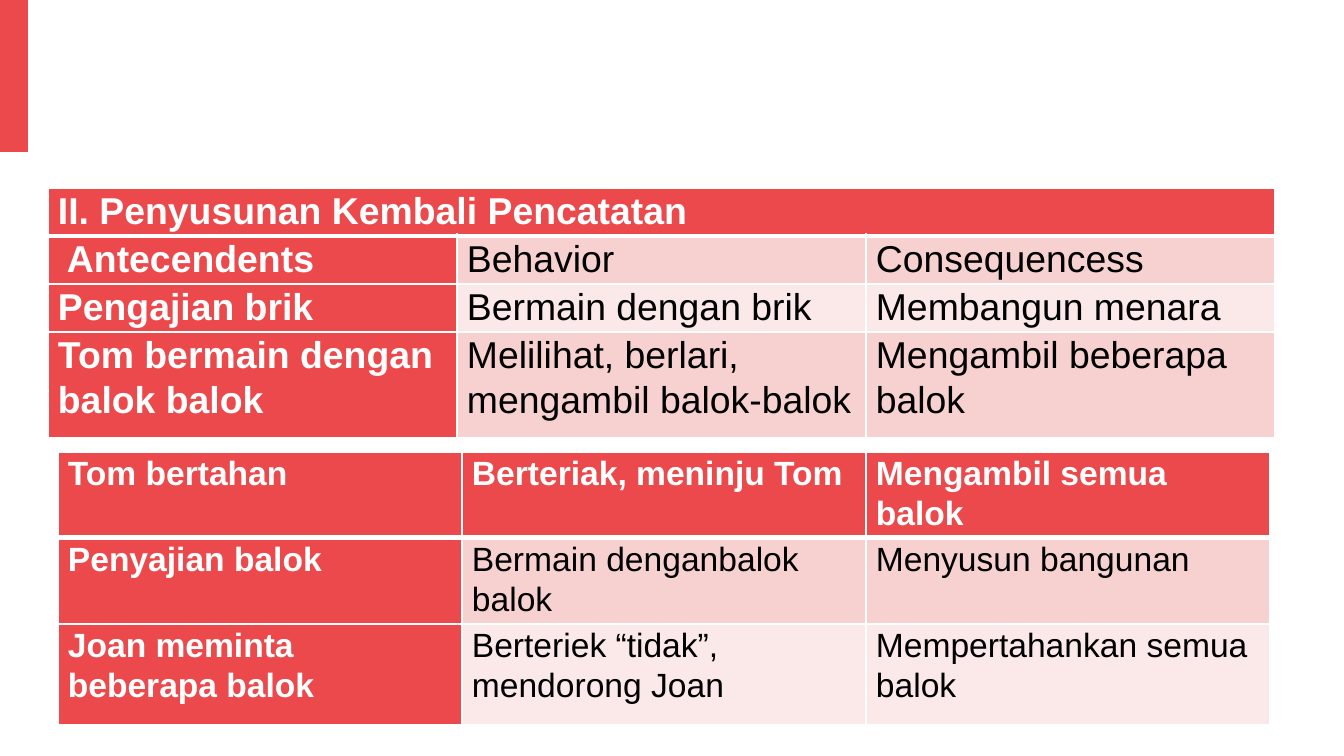
from pptx import Presentation, util as u
from pptx.dml.color import RGBColor
from pptx.enum import shapes
from pptx.oxml.ns import qn
from lxml import etree

# Content and layout of each table, lengths in px
TABLES = [
    dict(left=48, top=188, columns=[409, 409, 409], heights=[48, 48, 48, 106],
         size="large", merge_header=True, rows=[
             ["II. Penyusunan Kembali Pencatatan", "", ""],
             ["Antecendents", "Behavior", "Consequencess"],
             ["Pengajian brik", "Bermain dengan brik", "Membangun menara"],
             ["Tom bermain dengan balok balok",
              "Melilihat, berlari, mengambil balok-balok",
              "Mengambil beberapa balok"],
         ]),
    dict(left=58, top=452, columns=[404, 404, 404], heights=[86, 86, 101],
         size="medium", merge_header=False, rows=[
             ["Tom bertahan", "Berteriak, meninju Tom", "Mengambil semua\vbalok"],
             ["Penyajian balok", "Bermain denganbalok balok", "Menyusun bangunan"],
             ["Joan meminta\nbeberapa balok",
              "Berteriek “tidak”, mendorong Joan", "Mempertahankan semua balok"],
         ]),
]
INDENTED = "Antecendents"

THEME = dict(font="Arial", large=20, medium=18, red="EB494B",
             bands=["FBE9E9", "F7D0D0"], white="FFFFFF", black="000000",
             thin=1, thick=3)


def px(count):
    return u.Emu(round(count * 914400 / 134.4))


def color(name):
    return RGBColor.from_string(name)


def set_borders(cell, header, below_header):
    props = cell._tc.get_or_add_tcPr()
    widths = dict.fromkeys(["lnL", "lnR", "lnT", "lnB"], THEME["thin"])
    if header:
        widths["lnB"] = THEME["thick"]
    if below_header:
        widths["lnT"] = THEME["thick"]
    for index, (side, width) in enumerate(widths.items()):
        line = etree.Element(qn("a:" + side), w=str(u.Pt(width)))
        fill = etree.SubElement(line, qn("a:solidFill"))
        etree.SubElement(fill, qn("a:srgbClr"), val=THEME["white"])
        props.insert(index, line)


def format_cell(cell, text, row, column, size):
    strong = row == 0 or column == 0
    cell.margin_left = px(19 if text == INDENTED else 10)
    cell.margin_right = px(9)
    cell.margin_top = cell.margin_bottom = 0
    cell.fill.solid()
    cell.fill.fore_color.rgb = color(THEME["red"] if strong else THEME["bands"][row % 2])
    set_borders(cell, row == 0, row == 1)
    cell.text_frame.text = text
    for para in cell.text_frame.paragraphs:
        para.line_spacing = 1.07
        para.font.size = u.Pt(size)
        for span in para.runs:
            span.font.name = THEME["font"]
            span.font.size = u.Pt(size)
            span.font.bold = strong
            span.font.color.rgb = color(THEME["white" if strong else "black"])


def add_grid(page, data):
    columns, heights, rows = data["columns"], data["heights"], data["rows"]
    table = page.shapes.add_table(
        len(rows), len(columns), px(data["left"]), px(data["top"]),
        px(sum(columns)), px(sum(heights))).table
    for column, width in zip(table.columns, columns):
        column.width = px(width)
    for row, height in zip(table.rows, heights):
        row.height = px(height)
    for r, texts in enumerate(rows):
        for c, text in enumerate(texts):
            format_cell(table.cell(r, c), text, r, c, THEME[data["size"]])
    if data["merge_header"]:
        table.cell(0, 0).merge(table.cell(0, len(columns) - 1))


def main():
    deck = Presentation()
    deck.slide_width, deck.slide_height = px(1344), px(756)
    page = deck.slides.add_slide(deck.slide_layouts[6])

    # Corner accent
    accent = page.shapes.add_shape(shapes.MSO_SHAPE.RECTANGLE, 0, 0, px(28), px(152))
    accent.shadow.inherit = False
    accent.fill.solid()
    accent.fill.fore_color.rgb = color(THEME["red"])
    accent.line.fill.background()

    # Observation tables
    for data in TABLES:
        add_grid(page, data)
    deck.save("out.pptx")


if __name__ == "__main__":
    main()
